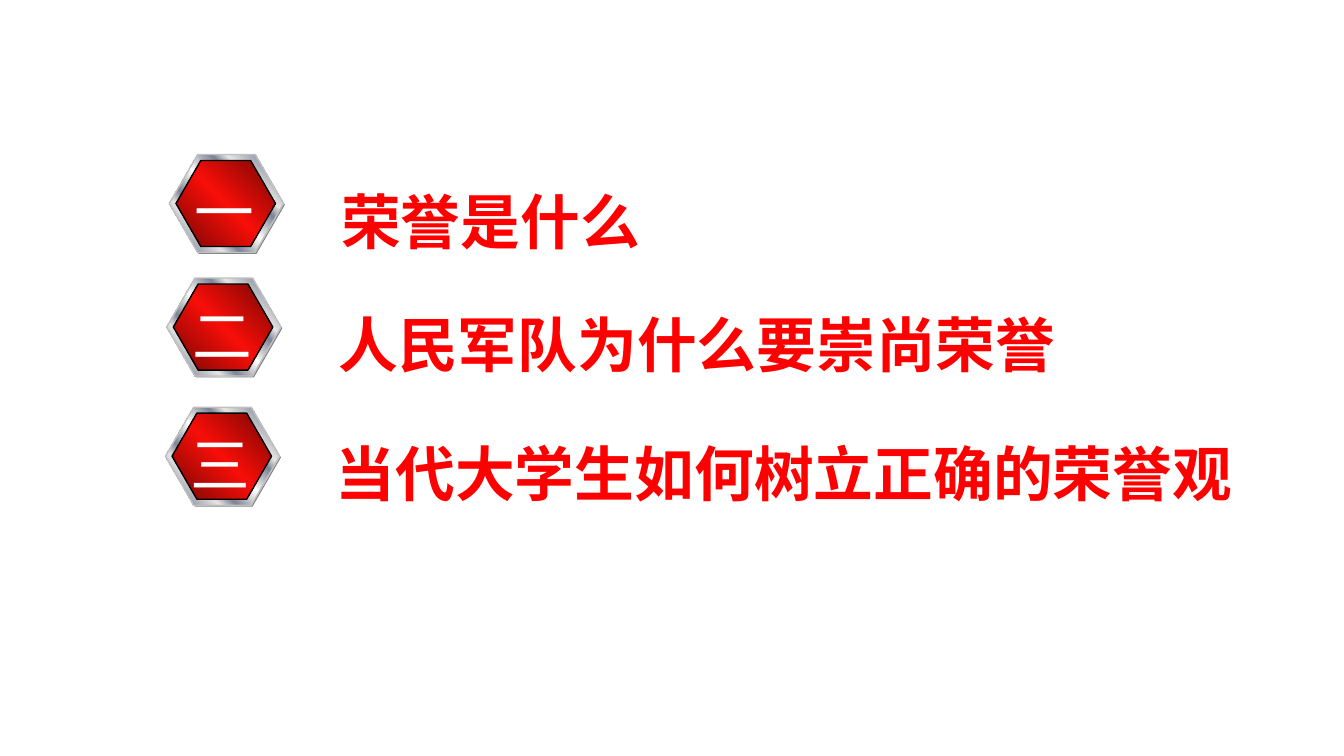
from pptx import Presentation
from pptx.dml.color import RGBColor
from pptx.enum.shapes import MSO_SHAPE
from pptx.enum.text import MSO_AUTO_SIZE
from pptx.oxml import parse_xml
from pptx.oxml.ns import nsdecls
from pptx.util import Pt

# Content: numeral, heading, badge corner, heading corner (points)
ITEMS = [
    ("一", "荣誉是什么", (90.7, 82.8), (175.7, 84.2), 176.4),
    ("二", "人民军队为什么要崇尚荣誉", (89.3, 149), (174.2, 149.8), 404),
    ("三", "当代大学生如何树立正确的荣誉观", (88.6, 218.2), (172.8, 218.9), 501),
]

# Style
FONT = "Noto Sans CJK SC"
RED = RGBColor(0xFF, 0x00, 0x00)
WHITE = RGBColor(0xFF, 0xFF, 0xFF)
GRAY = RGBColor(0x80, 0x80, 0x80)
SILVER = RGBColor(0xC0, 0xC0, 0xC0)
BLACK = RGBColor(0x00, 0x00, 0x00)
LIGHT = RGBColor(0xE6, 0xE6, 0xE6)
STEEL = RGBColor(0x7D, 0x84, 0x96)
DARK = RGBColor(0x73, 0x06, 0x04)
BRIGHT = RGBColor(0xF8, 0x0E, 0x08)
METAL = [(0, LIGHT), (8, STEEL), (26, LIGHT), (34, STEEL), (46, LIGHT),
         (50, WHITE), (53, LIGHT), (66, STEEL), (73, LIGHT), (92, STEEL),
         (100, LIGHT)]
GLOSS = [(0, DARK), (50, BRIGHT), (100, DARK)]
ANGLE = 315

# Badge layers: offset, size, fill, line
OUTER, INNER = (61.2, 52.5), (53.3, 46.1)
LAYERS = [
    ((0.7, 0.7), OUTER, GRAY, None),
    ((0, 0), OUTER, METAL, SILVER),
    ((3.6, 3.2), INNER, GLOSS, BLACK),
]


def add_text(shapes, text, left, top, width, height=57.6, size=32,
             color=RED, bold=False, wrap=False):
    box = shapes.add_textbox(Pt(left), Pt(top), Pt(width), Pt(height))
    frame = box.text_frame
    frame.word_wrap = wrap
    frame.auto_size = MSO_AUTO_SIZE.SHAPE_TO_FIT_TEXT
    para = frame.paragraphs[0]
    para.line_spacing = 1.3
    run = para.add_run()
    run.text = text
    font = run.font
    font.size, font.bold, font.name = Pt(size), bold, FONT
    font.color.rgb = color
    run._r.get_or_add_rPr().append(
        parse_xml(f'<a:ea {nsdecls("a")} typeface="{FONT}"/>'))


def set_fill(shape, fill):
    if isinstance(fill, RGBColor):
        shape.fill.solid()
        shape.fill.fore_color.rgb = fill
        return
    stops = "".join(f'<a:gs pos="{pos * 1000}"><a:srgbClr val="{color}"/></a:gs>'
                    for pos, color in fill)
    # Swap the default gradient for one with all the stops
    shape.fill.gradient()
    old = shape._element.spPr.find(
        "{http://schemas.openxmlformats.org/drawingml/2006/main}gradFill")
    new = parse_xml(f'<a:gradFill {nsdecls("a")} rotWithShape="1">'
                    f'<a:gsLst>{stops}</a:gsLst>'
                    f'<a:lin ang="{ANGLE * 60000}" scaled="1"/></a:gradFill>')
    old.getparent().replace(old, new)


def add_badge(slide, mark, left, top):
    shapes = slide.shapes.add_group_shape().shapes
    for (dx, dy), (width, height), fill, line in LAYERS:
        hexa = shapes.add_shape(MSO_SHAPE.HEXAGON, Pt(left + dx), Pt(top + dy),
                                Pt(width), Pt(height))
        hexa.adjustments[0] = 0.289
        hexa.adjustments[1] = 1.155
        hexa.shadow.inherit = False
        set_fill(hexa, fill)
        if line is None:
            hexa.line.fill.background()
        else:
            hexa.line.color.rgb = line
            hexa.line.width = Pt(0.75)
    add_text(shapes, mark, left + 6.6, top - 4, 46.8, color=WHITE, wrap=True)


def main():
    deck = Presentation()
    deck.slide_width, deck.slide_height = Pt(720), Pt(405)
    slide = deck.slides.add_slide(deck.slide_layouts[6])
    # Badge and heading of each item
    for mark, text, badge, head, width in ITEMS:
        add_badge(slide, mark, *badge)
        add_text(slide.shapes, text, *head, width, bold=True)
    deck.save("out.pptx")


if __name__ == "__main__":
    main()
